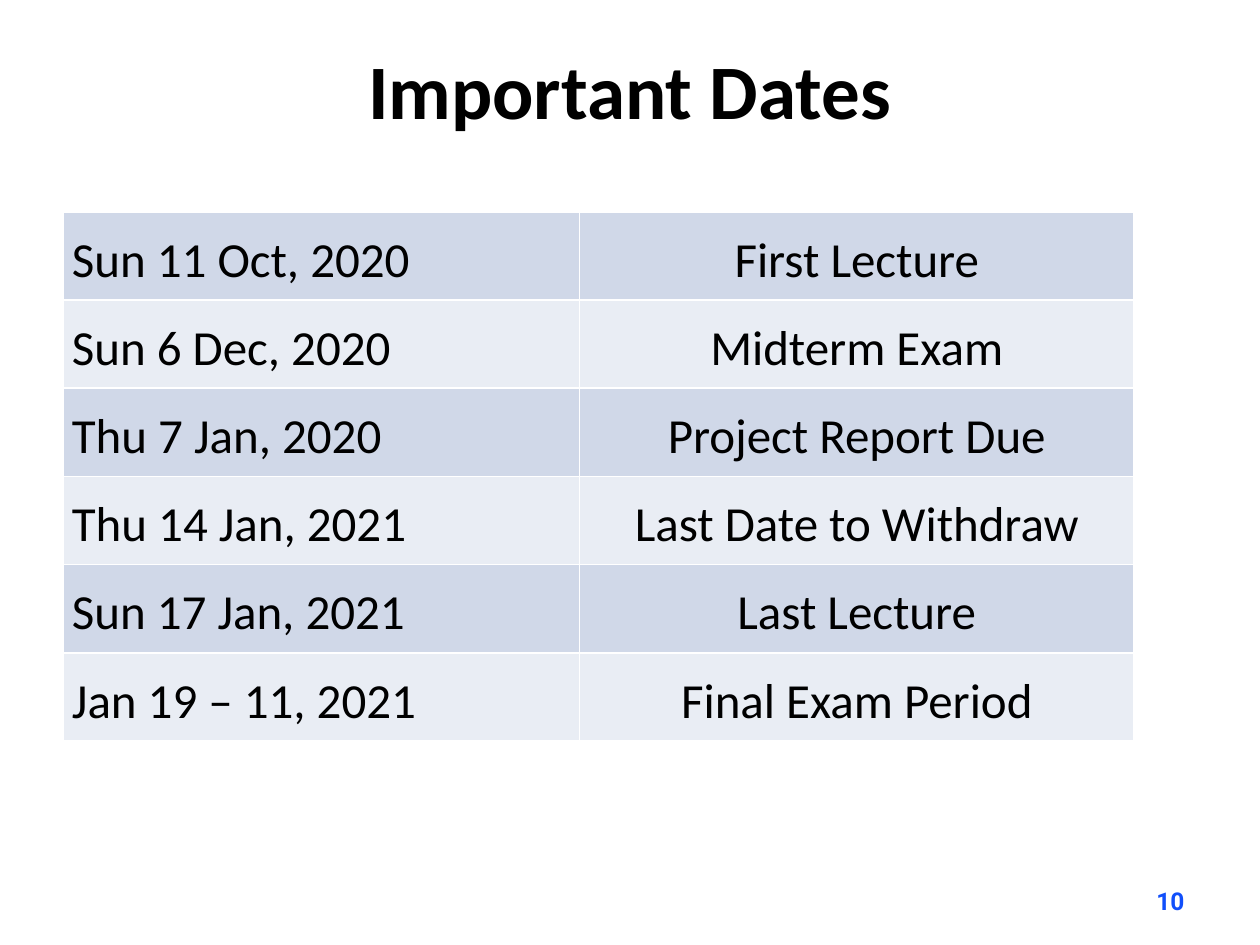
from pptx import Presentation
from pptx.dml.color import RGBColor
from pptx.enum.text import MSO_ANCHOR, PP_ALIGN
from pptx.oxml import parse_xml
from pptx.oxml.ns import nsdecls
from pptx.util import Cm, Pt

BLACK = RGBColor(0x00, 0x00, 0x00)
BLUE = RGBColor(0x11, 0x4F, 0xFB)
WHITE = RGBColor(0xFF, 0xFF, 0xFF)
BANDS = (RGBColor(0xD0, 0xD8, 0xE8), RGBColor(0xE9, 0xED, 0xF4))

DATES = [
    ("Sun 11 Oct, 2020", "First Lecture"),
    ("Sun 6 Dec, 2020", "Midterm Exam"),
    ("Thu 7 Jan, 2020", "Project Report Due"),
    ("Thu 14 Jan, 2021", "Last Date to Withdraw"),
    ("Sun 17 Jan, 2021", "Last Lecture"),
    ("Jan 19 – 11, 2021", "Final Exam Period"),
]


def write(frame, text, size, font="Calibri", color=BLACK, bold=False,
          align=PP_ALIGN.LEFT, spacing=None):
    """Put one formatted paragraph into a text frame."""
    frame.word_wrap = True
    para = frame.paragraphs[0]
    para.alignment = align
    para.line_spacing = spacing
    run = para.add_run()
    run.text = text
    run.font.name = font
    run.font.size = Pt(size)
    run.font.bold = bold
    run.font.color.rgb = color


def add_label(slide, box, text, **style):
    """Add a vertically centred text box."""
    frame = slide.shapes.add_textbox(*box).text_frame
    frame.vertical_anchor = MSO_ANCHOR.MIDDLE
    write(frame, text, **style)


def add_borders(cell, color, width):
    """Draw a solid line on all four sides of a cell."""
    props = cell._tc.get_or_add_tcPr()
    for spot, side in enumerate(("lnL", "lnR", "lnT", "lnB")):
        props.insert(spot, parse_xml(
            f'<a:{side} {nsdecls("a")} w="{Pt(width)}"><a:solidFill>'
            f'<a:srgbClr val="{color}"/></a:solidFill></a:{side}>'))


def add_dates(slide, box, rows):
    """Add the banded table of dates and events."""
    left, top, width, height = box
    table = slide.shapes.add_table(len(rows), 2, *box).table
    table.first_row = False
    table.columns[0].width = Cm(10.41)
    table.columns[1].width = width - Cm(10.41)
    for r, row in enumerate(rows):
        table.rows[r].height = height // len(rows)
        for c, text in enumerate(row):
            cell = table.cell(r, c)
            cell.fill.solid()
            cell.fill.fore_color.rgb = BANDS[r % 2]
            cell.vertical_anchor = MSO_ANCHOR.MIDDLE
            cell.margin_left = cell.margin_right = Cm(0.18)
            cell.margin_top = cell.margin_bottom = 0
            add_borders(cell, WHITE, 1)
            write(cell.text_frame, text, size=28, spacing=1.15,
                  align=PP_ALIGN.CENTER if c else PP_ALIGN.LEFT)


def main():
    deck = Presentation()
    deck.slide_width, deck.slide_height = Cm(25.4), Cm(19.05)
    slide = deck.slides.add_slide(deck.slide_layouts[6])

    # Title
    add_label(slide, (Cm(1.27), Cm(0.2), Cm(22.86), Cm(3.18)),
              "Important Dates", size=44, bold=True, align=PP_ALIGN.CENTER)
    # Dates
    add_dates(slide, (Cm(1.27), Cm(4.27), Cm(21.59), Cm(10.67)), DATES)
    # Page number
    add_label(slide, (Cm(18.21), Cm(17.65), Cm(5.92), Cm(1.02)), "10",
              size=14, font="Roboto", color=BLUE, bold=True,
              align=PP_ALIGN.RIGHT)

    deck.save("out.pptx")


if __name__ == "__main__":
    main()
